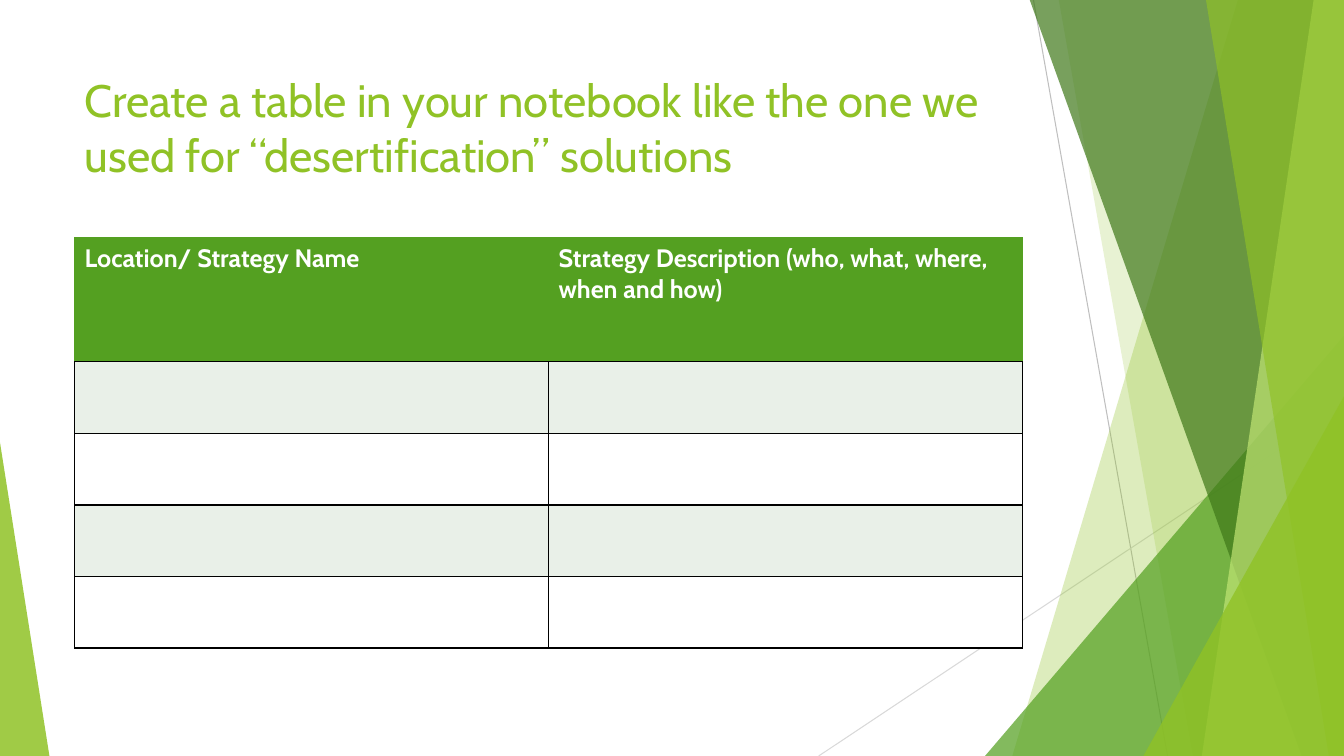
from lxml.etree import SubElement
from pptx import Presentation
from pptx.dml.color import RGBColor
from pptx.enum.shapes import MSO_CONNECTOR, MSO_SHAPE
from pptx.enum.text import MSO_ANCHOR, PP_ALIGN
from pptx.oxml import parse_xml
from pptx.oxml.ns import nsdecls, qn
from pptx.util import Inches, Pt

COLORS = {
    "lime": "90C226", "green": "54A021", "forest": "3F7819", "pale": "C0E474",
    "band": "E9F0E8", "white": "FFFFFF", "black": "000000",
    "gray": "BFBFBF", "light gray": "D9D9D9",
}
FONT = "Cabin"
TITLE = "Create a table in your notebook like the one we used for “desertification” solutions"
HEADERS = ["Location/ Strategy Name", "Strategy Description (who, what, where, when and how)"]
BODY_ROWS = 4
HEADER_HEIGHT, ROW_HEIGHT, COLUMN_WIDTH = 1.23, 0.71, 4.7
LEFT, CONTENT_WIDTH = 0.74, 9.4
TITLE_TOP, TITLE_HEIGHT, TABLE_TOP = 0.67, 1.44, 2.36
RIGHT, TOP, BOTTOM = 13.33, -0.01, 7.5

RAYS = [
    ((10.25, 0), (11.58, BOTTOM), "gray"),
    ((RIGHT, 4.03), (8.12, BOTTOM), "light gray"),
]
FACETS = [
    ("blade", (12.28, 10.04), "lime", 30),
    ("blade", (10.5, 11.83), "lime", 20),
    ("triangle", (9.77, 3.33, RIGHT, 1), "green", 72),
    ("blade", (10.21, 12.91), "forest", 70),
    ("blade", (13.03, 11.92), "pale", 70),
    ("blade", (11.96, 13.18), "lime", 65),
    ("triangle", (11.34, 3.93, RIGHT, 1), "lime", 80),
    ("triangle", (0, 4.39, 0.49, 0), "lime", 85),
]


def rgb(name):
    return RGBColor.from_string(COLORS[name])


def add_ray(page, start, end, color):
    ray = page.shapes.add_connector(
        MSO_CONNECTOR.STRAIGHT, *(Inches(value) for value in (*start, *end)))
    ray.line.color.rgb = rgb(color)
    ray.line.width = Pt(0.75)
    SubElement(ray._element.spPr, qn("a:effectLst"))


def add_blade(page, top_x, bottom_x):
    corners = [(RIGHT, TOP), (RIGHT, BOTTOM), (bottom_x, BOTTOM)]
    builder = page.shapes.build_freeform(Inches(top_x), Inches(TOP))
    builder.add_line_segments([(Inches(x), Inches(y)) for x, y in corners], close=True)
    return builder.convert_to_shape()


def add_triangle(page, left, top, right, apex):
    triangle = page.shapes.add_shape(
        MSO_SHAPE.ISOSCELES_TRIANGLE, Inches(left), Inches(top),
        Inches(right - left), Inches(BOTTOM - top))
    triangle.adjustments[0] = apex
    return triangle


def add_facet(page, kind, geometry, color, opacity):
    facet = (add_blade if kind == "blade" else add_triangle)(page, *geometry)
    facet.shadow.inherit = False
    facet.line.fill.background()
    facet.fill.solid()
    facet.fill.fore_color.rgb = rgb(color)
    tint = facet._element.spPr.find(qn("a:solidFill"))[0]
    SubElement(tint, qn("a:alpha"), val=str(opacity * 1000))


def style_text(para, size, color, bold=False):
    para.alignment = PP_ALIGN.LEFT
    para.font.name = FONT
    para.font.size = Pt(size)
    para.font.bold = bold
    para.font.color.rgb = rgb(color)


def add_title(page):
    box = page.shapes.add_textbox(
        Inches(LEFT), Inches(TITLE_TOP), Inches(CONTENT_WIDTH), Inches(TITLE_HEIGHT))
    box.text_frame.word_wrap = True
    box.text_frame.vertical_anchor = MSO_ANCHOR.TOP
    para = box.text_frame.paragraphs[0]
    para.text = TITLE
    style_text(para, 32.4, "lime")


def set_borders(cell, colors):
    properties = cell._tc.get_or_add_tcPr()
    for index, (side, color) in enumerate(zip("LRTB", colors)):
        properties.insert(index, parse_xml(
            f'<a:ln{side} {nsdecls("a")} w="12700"><a:solidFill>'
            f'<a:srgbClr val="{COLORS[color]}"/></a:solidFill></a:ln{side}>'))


def add_strategy_table(page):
    heights = [HEADER_HEIGHT] + [ROW_HEIGHT] * BODY_ROWS
    table = page.shapes.add_table(
        len(heights), len(HEADERS), Inches(LEFT), Inches(TABLE_TOP),
        Inches(CONTENT_WIDTH), Inches(sum(heights))).table
    for column in table.columns:
        column.width = Inches(COLUMN_WIDTH)
    for index, height in enumerate(heights):
        row = table.rows[index]
        row.height = Inches(height)
        fill = "green" if index == 0 else "band" if index % 2 else "white"
        edge = "green" if index == 0 else "black"
        for cell in row.cells:
            cell.fill.solid()
            cell.fill.fore_color.rgb = rgb(fill)
            set_borders(cell, [edge, edge, edge, "black"])
    for cell, header in zip(table.rows[0].cells, HEADERS):
        cell.text = header
        style_text(cell.text_frame.paragraphs[0], 18, "white", bold=True)


def main():
    """Build the strategy table slide."""
    deck = Presentation()
    deck.slide_width, deck.slide_height = Inches(13.33), Inches(7.5)
    page = deck.slides.add_slide(deck.slide_layouts[6])
    for ray in RAYS:
        add_ray(page, *ray)
    for facet in FACETS:
        add_facet(page, *facet)
    add_title(page)
    add_strategy_table(page)
    deck.save("out.pptx")


if __name__ == "__main__":
    main()
